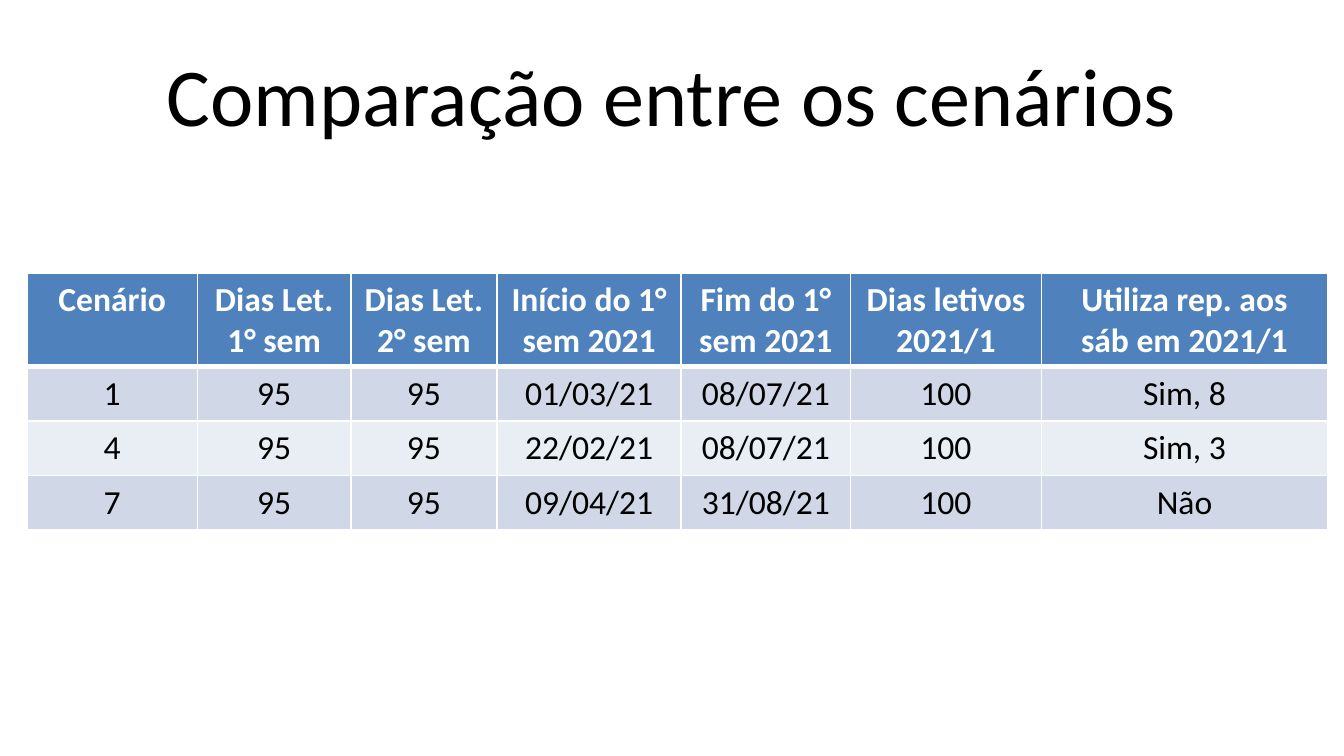
"""Build the slide that compares the academic calendar scenarios."""
from typing import NamedTuple

from lxml import etree
from pptx import Presentation
from pptx.dml.color import RGBColor
from pptx.enum.text import MSO_ANCHOR, PP_ALIGN
from pptx.oxml.ns import qn
from pptx.util import Inches, Pt

CENTER = PP_ALIGN.CENTER
MIDDLE = MSO_ANCHOR.MIDDLE
FONT = "Calibri"
BLACK = RGBColor(0x00, 0x00, 0x00)
WHITE = RGBColor(0xFF, 0xFF, 0xFF)
HEADER_BLUE = RGBColor(0x4F, 0x81, 0xBD)
BAND_DARK = RGBColor(0xD0, 0xD8, 0xE8)
BAND_LIGHT = RGBColor(0xE9, 0xED, 0xF4)
THIN, THICK = Pt(1), Pt(3)
SLIDE_WIDTH = 10
SLIDE_HEIGHT = SLIDE_WIDTH * 9 / 16
TABLE_HEIGHT, HEADER_HEIGHT = 1.9, 0.69


class Column(NamedTuple):
    heading: str
    width: float


class Scenario(NamedTuple):
    number: str
    days_first: str
    days_second: str
    start: str
    end: str
    school_days: str
    saturdays: str


class RowStyle(NamedTuple):
    fill: RGBColor
    color: RGBColor
    bold: bool
    top: int
    bottom: int


COLUMNS = (
    Column("Cenário", 1.27),
    Column("Dias Let. 1° sem", 1.14),
    Column("Dias Let. 2° sem", 1.09),
    Column("Início do 1° sem 2021", 1.37),
    Column("Fim do 1° sem 2021", 1.26),
    Column("Dias letivos 2021/1", 1.42),
    Column("Utiliza rep. aos sáb em 2021/1", 2.13),
)
SCENARIOS = (
    Scenario("1", "95", "95", "01/03/21", "08/07/21", "100", "Sim, 8"),
    Scenario("4", "95", "95", "22/02/21", "08/07/21", "100", "Sim, 3"),
    Scenario("7", "95", "95", "09/04/21", "31/08/21", "100", "Não"),
)


def write(frame, text: str, size: int, color: RGBColor, bold: bool = False) -> None:
    paragraph = frame.paragraphs[0]
    paragraph.alignment = CENTER
    run = paragraph.add_run()
    run.text = text
    run.font.name = FONT
    run.font.size = Pt(size)
    run.font.bold = bold
    run.font.color.rgb = color


def add_borders(cell, top: int, bottom: int) -> None:
    properties = cell._tc.get_or_add_tcPr()
    for side, width in (("L", THIN), ("R", THIN), ("T", top), ("B", bottom)):
        line = etree.SubElement(properties, qn(f"a:ln{side}"), w=str(width))
        solid = etree.SubElement(line, qn("a:solidFill"))
        etree.SubElement(solid, qn("a:srgbClr"), val=str(WHITE))


def fill_row(cells, texts: tuple[str, ...], style: RowStyle) -> None:
    for cell, text in zip(cells, texts):
        add_borders(cell, style.top, style.bottom)
        cell.fill.solid()
        cell.fill.fore_color.rgb = style.fill
        write(cell.text_frame, text, 18, style.color, style.bold)


def add_title(slide, text: str) -> None:
    title = slide.shapes.add_textbox(Inches(0.5), Inches(0.23), Inches(9), Inches(0.94))
    title.text_frame.word_wrap = True
    title.text_frame.vertical_anchor = MIDDLE
    write(title.text_frame, text, 44, BLACK)


def add_comparison(slide) -> None:
    width = sum(column.width for column in COLUMNS)
    row_height = (TABLE_HEIGHT - HEADER_HEIGHT) / len(SCENARIOS)
    comparison = slide.shapes.add_table(
        len(SCENARIOS) + 1, len(COLUMNS),
        Inches(0.2), Inches(2.03), Inches(width), Inches(TABLE_HEIGHT),
    ).table
    for table_column, column in zip(comparison.columns, COLUMNS):
        table_column.width = Inches(column.width)
    header, *body = comparison.rows
    header.height = Inches(HEADER_HEIGHT)
    headings = tuple(column.heading for column in COLUMNS)
    fill_row(header.cells, headings, RowStyle(HEADER_BLUE, WHITE, True, THIN, THICK))
    for index, (row, scenario) in enumerate(zip(body, SCENARIOS)):
        row.height = Inches(row_height)
        band = BAND_LIGHT if index % 2 else BAND_DARK
        top = THIN if index else THICK
        fill_row(row.cells, scenario, RowStyle(band, BLACK, False, top, THIN))


def main() -> None:
    presentation = Presentation()
    presentation.slide_width = Inches(SLIDE_WIDTH)
    presentation.slide_height = Inches(SLIDE_HEIGHT)
    slide = presentation.slides.add_slide(presentation.slide_layouts[6])
    add_title(slide, "Comparação entre os cenários")
    add_comparison(slide)
    presentation.save("out.pptx")


if __name__ == "__main__":
    main()
